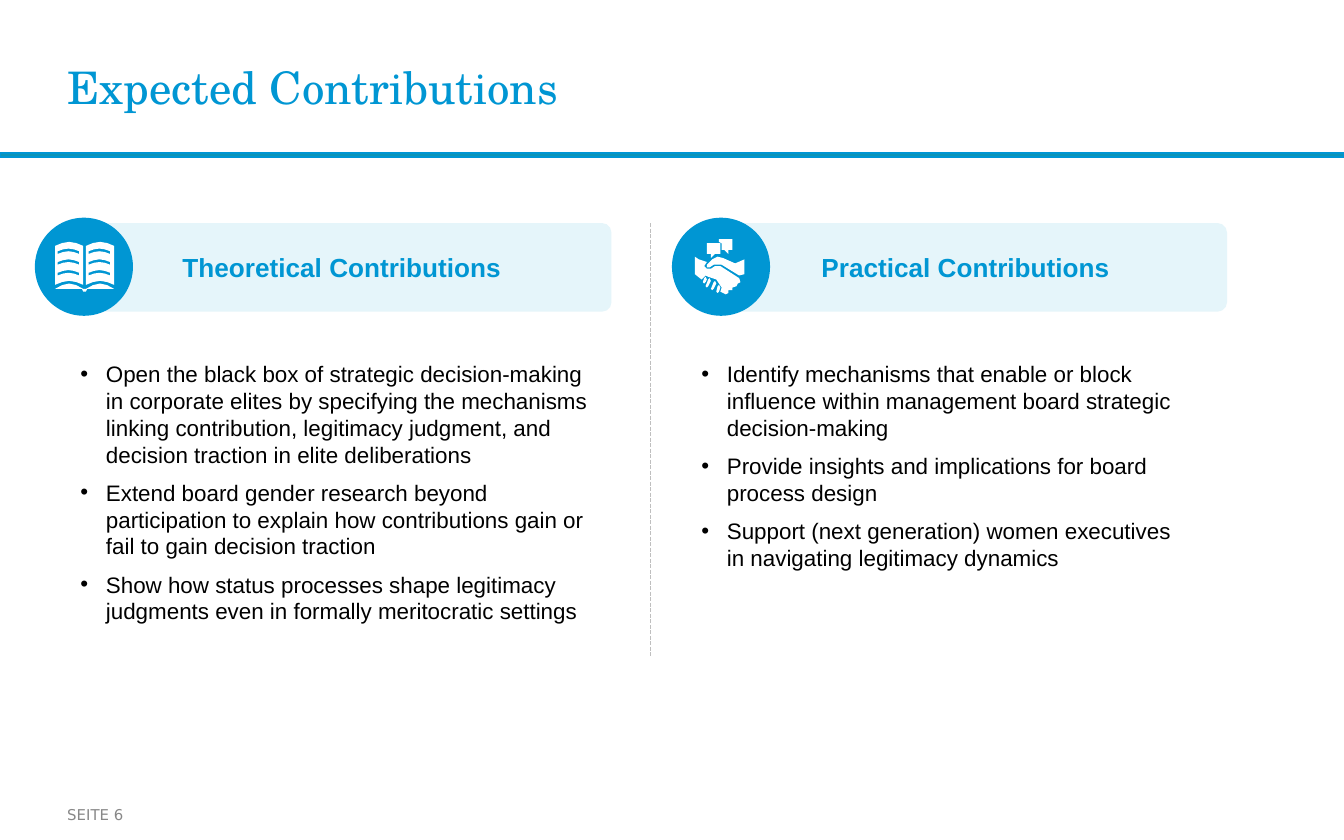
import math

from lxml import etree
from pptx import Presentation
from pptx.dml.color import RGBColor
from pptx.enum.dml import MSO_LINE
from pptx.enum.shapes import MSO_CONNECTOR, MSO_SHAPE
from pptx.enum.text import MSO_ANCHOR, PP_ALIGN
from pptx.oxml.ns import qn
from pptx.util import Inches, Pt

RECTANGLE = MSO_SHAPE.RECTANGLE
ROUNDED = MSO_SHAPE.ROUNDED_RECTANGLE
OVAL = MSO_SHAPE.OVAL
MIDDLE, TOP = MSO_ANCHOR.MIDDLE, MSO_ANCHOR.TOP
LEFT, CENTER = PP_ALIGN.LEFT, PP_ALIGN.CENTER

COLORS = {
    "accent": "0096D3",
    "bar": "0C94B7",
    "panel": "E5F5FA",
    "divider": "BFBFBF",
    "footer": "888888",
    "black": "000000",
    "white": "FFFFFF",
}

deck = Presentation()
deck.slide_width, deck.slide_height = Inches(10), Inches(6.25)
page = deck.slides.add_slide(deck.slide_layouts[5])


def write_text(box, lines, size, color, font="Arial", bold=False, align=LEFT,
               anchor=MIDDLE, insets=(0.1, 0.05, 0.1, 0.05), bullets=False):
    frame = box.text_frame
    frame.word_wrap = True
    frame.vertical_anchor = anchor
    (frame.margin_left, frame.margin_top,
     frame.margin_right, frame.margin_bottom) = [Inches(inset) for inset in insets]
    frame.text = "\n".join(lines)
    for para in frame.paragraphs:
        para.alignment = align
        if bullets:
            settings = para._p.get_or_add_pPr()
            settings.set("marL", str(Inches(0.19)))
            settings.set("indent", str(-Inches(0.19)))
            tint = etree.SubElement(settings, qn("a:buClr"))
            etree.SubElement(tint, qn("a:srgbClr"), val=COLORS[color])
            etree.SubElement(settings, qn("a:buFont"), typeface="Arial")
            etree.SubElement(settings, qn("a:buChar"), char="•")
            para.space_after = Pt(6)
        for span in para.runs:
            span.font.name, span.font.size, span.font.bold = font, Pt(size), bold
            span.font.color.rgb = RGBColor.from_string(COLORS[color])


def draw_shape(color, kind=None, place=None, outlines=None):
    """Add a filled preset at place, or one freeform made of closed outlines."""
    if outlines:
        contours = [[(Inches(x), Inches(y)) for x, y in outline] for outline in outlines]
        builder = page.shapes.build_freeform(*contours[0][0])
        for contour in contours:
            if contour is not contours[0]:
                builder.move_to(*contour[0])
            builder.add_line_segments(contour[1:], close=True)
        shape = builder.convert_to_shape()
    else:
        shape = page.shapes.add_shape(kind, *[Inches(length) for length in place])
    shape.shadow.inherit = False
    shape.fill.solid()
    shape.fill.fore_color.rgb = RGBColor.from_string(COLORS[color])
    shape.line.fill.background()
    return shape


# Title, rule and page number
title = page.shapes.title
title.left, title.top = Inches(0.5), Inches(0.15)
title.width, title.height = Inches(7.84), Inches(0.99)
write_text(title, ["Expected Contributions"], 24, "accent",
           font="TeX Gyre Schola", insets=(0, 0, 0, 0))

rule = draw_shape("bar", RECTANGLE, (0, 1.14, 10, 0.03))
rule.line.color.rgb = RGBColor.from_string(COLORS["accent"])
rule.line.width = Pt(1)

footer = page.shapes.add_textbox(Inches(0.5), Inches(5.92), Inches(0.98), Inches(0.28))
write_text(footer, ["SEITE 6"], 8, "footer", font="DejaVu Sans", insets=(0, 0.05, 0, 0.05))

# Two columns: header panel, icon disc and bullets
columns = [
    ("Theoretical Contributions", (0.59, 3.96), 0.26, (0.5, 4.07, 2.09), 0.1, [
        "Open the black box of strategic decision-making in corporate elites by specifying "
        "the mechanisms linking contribution, legitimacy judgment, and decision traction "
        "in elite deliberations",
        "Extend board gender research beyond participation to explain how contributions "
        "gain or fail to gain decision traction",
        "Show how status processes shape legitimacy judgments even in formally "
        "meritocratic settings",
    ]),
    ("Practical Contributions", (5.29, 3.84), 5, (5.12, 4, 1.68), 0.3, [
        "Identify mechanisms that enable or block influence within management board "
        "strategic decision-making",
        "Provide insights and implications for board process design",
        "Support (next generation) women executives in navigating legitimacy dynamics",
    ]),
]
for heading, (panel_left, panel_width), disc_left, place, right_inset, points in columns:
    panel = draw_shape("panel", ROUNDED, (panel_left, 1.66, panel_width, 0.66))
    panel.adjustments[0] = 0.107
    write_text(panel, [heading], 14, "accent", bold=True, align=CENTER,
               insets=(0.1, 0.05, 0.15, 0.05))
    draw_shape("accent", OVAL, (disc_left, 1.62, 0.73, 0.73))
    left, width, height = place
    box = page.shapes.add_textbox(Inches(left), Inches(2.63), Inches(width), Inches(height))
    write_text(box, points, 12, "black", anchor=TOP, bullets=True,
               insets=(0.1, 0.05, right_inset, 0.05))

# Dashed divider
divider = page.shapes.add_connector(
    MSO_CONNECTOR.STRAIGHT, Inches(4.84), Inches(1.66), Inches(4.84), Inches(4.88))
divider.line.color.rgb = RGBColor.from_string(COLORS["divider"])
divider.line.width = Pt(0.75)
divider.line.dash_style = MSO_LINE.SQUARE_DOT
etree.SubElement(divider._element.spPr, qn("a:effectLst"))

# Book icon: arched pages, with the text lines cut out, above an arched base
# Each band is offset, width, top, bottom, top rise, bottom rise
bands = [(0, 0.21, 1.83, 2.12, 0.03, 0.03)]
bands += [(0.02, 0.16, 1.87 + 0.08 * row, 1.89 + 0.08 * row, 0.02, 0.02) for row in range(3)]
bands.append((0, 0.21, 2.15, 2.15, 0.04, 0))
steps = [step / 4 for step in range(5)]
book = [[(0.61, 2.15), (0.65, 2.15), (0.64, 2.17), (0.62, 2.17)]]
for page_left in (0.41, 0.64):
    for offset, width, top, bottom, top_rise, bottom_rise in bands:
        start = page_left + offset
        upper = [(start + width * t, top - top_rise * math.sin(math.pi * t)) for t in steps]
        lower = [(start + width * t, bottom - bottom_rise * math.sin(math.pi * t))
                 for t in reversed(steps)]
        book.append(upper + lower)
draw_shape("white", outlines=book)

# Handshake icon: right and left bubble, left and right hand, then four fingers
handshake = [
    [(5.35, 1.78), (5.45, 1.78), (5.45, 1.86), (5.42, 1.86), (5.42, 1.89),
     (5.39, 1.86), (5.37, 1.86), (5.37, 1.81), (5.35, 1.8)],
    [(5.26, 1.81), (5.36, 1.81), (5.36, 1.89), (5.32, 1.89), (5.29, 1.92),
     (5.29, 1.89), (5.26, 1.89)],
    [(5.17, 1.91), (5.2, 1.93), (5.26, 1.95), (5.24, 1.98), (5.26, 2), (5.29, 2),
     (5.32, 1.98), (5.36, 1.98), (5.5, 2.07), (5.51, 2.1), (5.49, 2.11), (5.48, 2.13),
     (5.45, 2.14), (5.45, 2.16), (5.42, 2.16), (5.42, 2.18), (5.4, 2.19), (5.36, 2.17),
     (5.37, 2.14), (5.35, 2.11), (5.33, 2.08), (5.3, 2.07), (5.27, 2.06), (5.25, 2.05),
     (5.22, 2.08), (5.17, 2.04)],
    [(5.54, 1.93), (5.54, 2.04), (5.5, 2.05), (5.37, 1.97), (5.31, 1.97), (5.28, 1.99),
     (5.26, 1.99), (5.26, 1.97), (5.3, 1.93), (5.34, 1.91), (5.38, 1.92), (5.47, 1.96)],
]
fingers = [(5.25, 2.07, 5.24, 2.1), (5.28, 2.08, 5.26, 2.13),
           (5.32, 2.1, 5.3, 2.15), (5.35, 2.13, 5.34, 2.17)]
for top_x, top_y, tip_x, tip_y in fingers:
    handshake.append([(top_x - 0.01, top_y), (top_x, top_y - 0.01), (top_x + 0.01, top_y + 0.01),
                      (tip_x + 0.01, tip_y), (tip_x, tip_y + 0.01), (tip_x - 0.01, tip_y)])
draw_shape("white", outlines=handshake)

deck.save("out.pptx")
